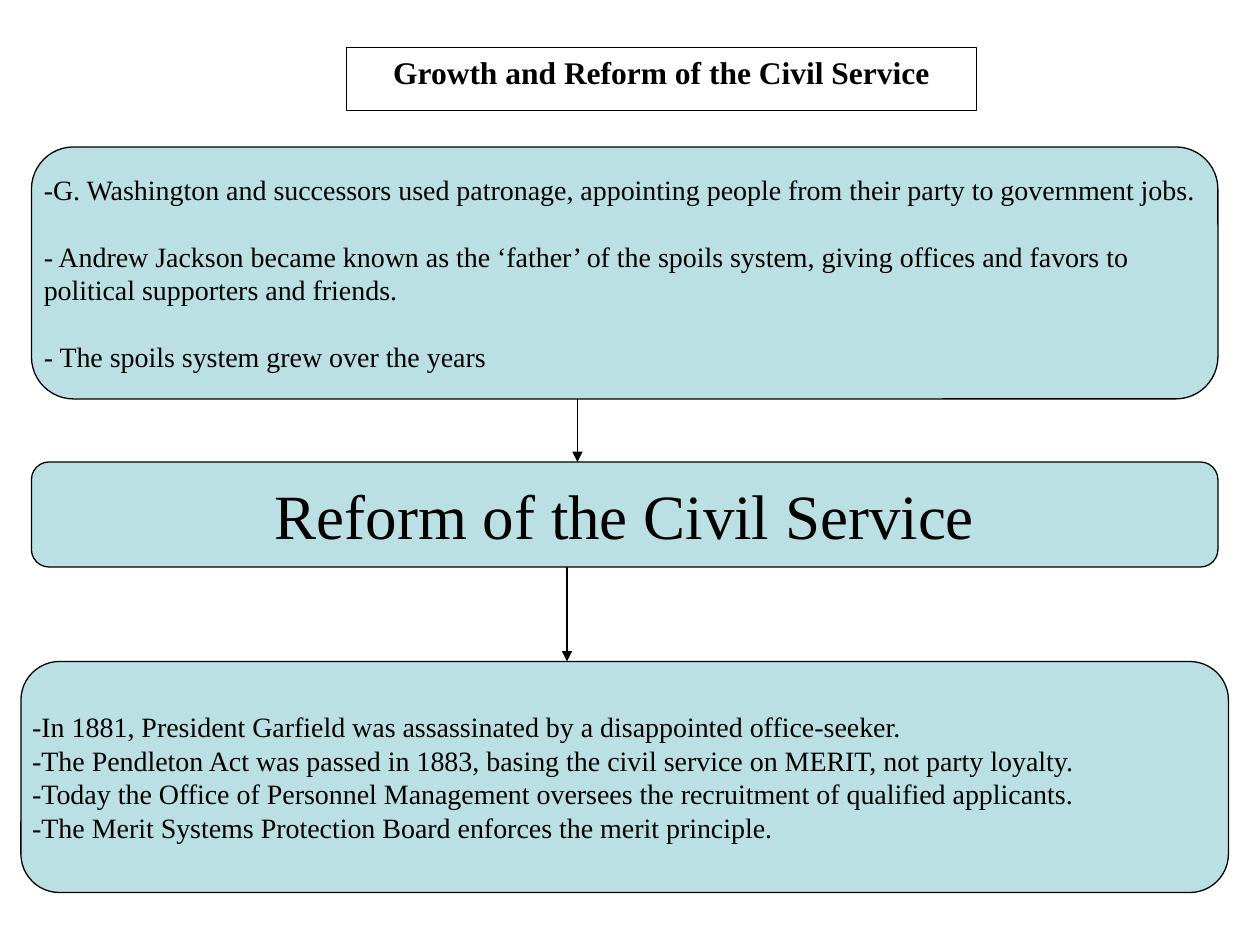
from lxml.etree import SubElement
from pptx import Presentation
from pptx.dml.color import RGBColor
from pptx.enum.shapes import MSO_CONNECTOR as Connector, MSO_SHAPE as Shape
from pptx.enum.text import MSO_ANCHOR as Anchor, PP_ALIGN as Align
from pptx.oxml.ns import qn
from pptx.util import Inches, Pt

COLORS = {"paper": "FFFFFF", "panel": "BBE0E3", "ink": "000000"}
FONT = "Times New Roman"
CELL = Inches(1) // 12  # the slide is a grid of 120 columns and 90 rows
LINE_WIDTH = Pt(0.75)

# Boxes are (column, row, columns, rows)
TITLE_BOX = (33, 4.5, 60, 6)
PATRONAGE_BOX = (3, 14, 113, 24)
REFORM_BOX = (3, 44, 113, 10)
MERIT_BOX = (2, 63, 115, 22)

PATRONAGE = [
    "-G. Washington and successors used patronage, appointing people from their party to government jobs.",
    "- Andrew Jackson became known as the ‘father’ of the spoils system, "
    "giving offices and favors to political supporters and friends.",
    "- The spoils system grew over the years",
]
MERIT = [
    "-In 1881, President Garfield was assassinated by a disappointed office-seeker.",
    "-The Pendleton Act was passed in 1883, basing the civil service on MERIT, not party loyalty.",
    "-Today the Office of Personnel Management oversees the recruitment of qualified applicants.",
    "-The Merit Systems Protection Board enforces the merit principle.",
]


def grid(*cells):
    return [int(cell * CELL) for cell in cells]


def color(name):
    return RGBColor.from_string(COLORS[name])


def write(frame, lines, size=16, bold=False, align=Align.LEFT, gap=0):
    """Write one paragraph per line, with gap points between them."""
    frame.word_wrap = True
    for index, line in enumerate(lines):
        paragraph = frame.paragraphs[0] if index == 0 else frame.add_paragraph()
        paragraph.alignment = align
        paragraph.space_before = Pt(gap if index else 0)
        run = paragraph.add_run()
        run.text = line
        run.font.name, run.font.size, run.font.bold = FONT, Pt(size), bold
        run.font.color.rgb = color("ink")


def add_outlined(slide, kind, box, fill):
    shape = slide.shapes.add_shape(kind, *grid(*box))
    shape.shadow.inherit = False
    shape.fill.solid()
    shape.fill.fore_color.rgb = color(fill)
    shape.line.color.rgb = color("ink")
    shape.line.width = LINE_WIDTH
    return shape


def add_title(slide, box, text):
    shape = add_outlined(slide, Shape.RECTANGLE, box, "paper")
    shape.text_frame.vertical_anchor = Anchor.TOP
    write(shape.text_frame, [text], size=18, bold=True, align=Align.CENTER)


def add_panel(slide, box, lines, **text_format):
    shape = add_outlined(slide, Shape.ROUNDED_RECTANGLE, box, "panel")
    shape.adjustments[0] = 0.167
    frame = shape.text_frame
    frame.margin_left = frame.margin_top = frame.margin_right = frame.margin_bottom = 0
    frame.vertical_anchor = Anchor.MIDDLE
    write(frame, lines, **text_format)


def add_down_arrow(slide, column, upper_box, lower_box):
    """Point from the bottom of one box to the top of the next."""
    start = upper_box[1] + upper_box[3]
    ends = grid(column, start, column, lower_box[1])
    arrow = slide.shapes.add_connector(Connector.STRAIGHT, *ends)
    arrow.line.color.rgb = color("ink")
    arrow.line.width = LINE_WIDTH
    SubElement(arrow.line._get_or_add_ln(), qn("a:tailEnd"), type="triangle")
    SubElement(arrow._element.spPr, qn("a:effectLst"))


def main():
    presentation = Presentation()
    presentation.slide_width, presentation.slide_height = grid(120, 90)
    slide = presentation.slides.add_slide(presentation.slide_layouts[6])
    slide.background.fill.solid()
    slide.background.fill.fore_color.rgb = color("paper")

    add_title(slide, TITLE_BOX, "Growth and Reform of the Civil Service")
    add_panel(slide, PATRONAGE_BOX, PATRONAGE, gap=19)
    add_panel(slide, REFORM_BOX, ["Reform of the Civil Service"], size=36, align=Align.CENTER)
    add_panel(slide, MERIT_BOX, MERIT)
    add_down_arrow(slide, 55, PATRONAGE_BOX, REFORM_BOX)
    add_down_arrow(slide, 54, REFORM_BOX, MERIT_BOX)
    presentation.save("out.pptx")


if __name__ == "__main__":
    main()
